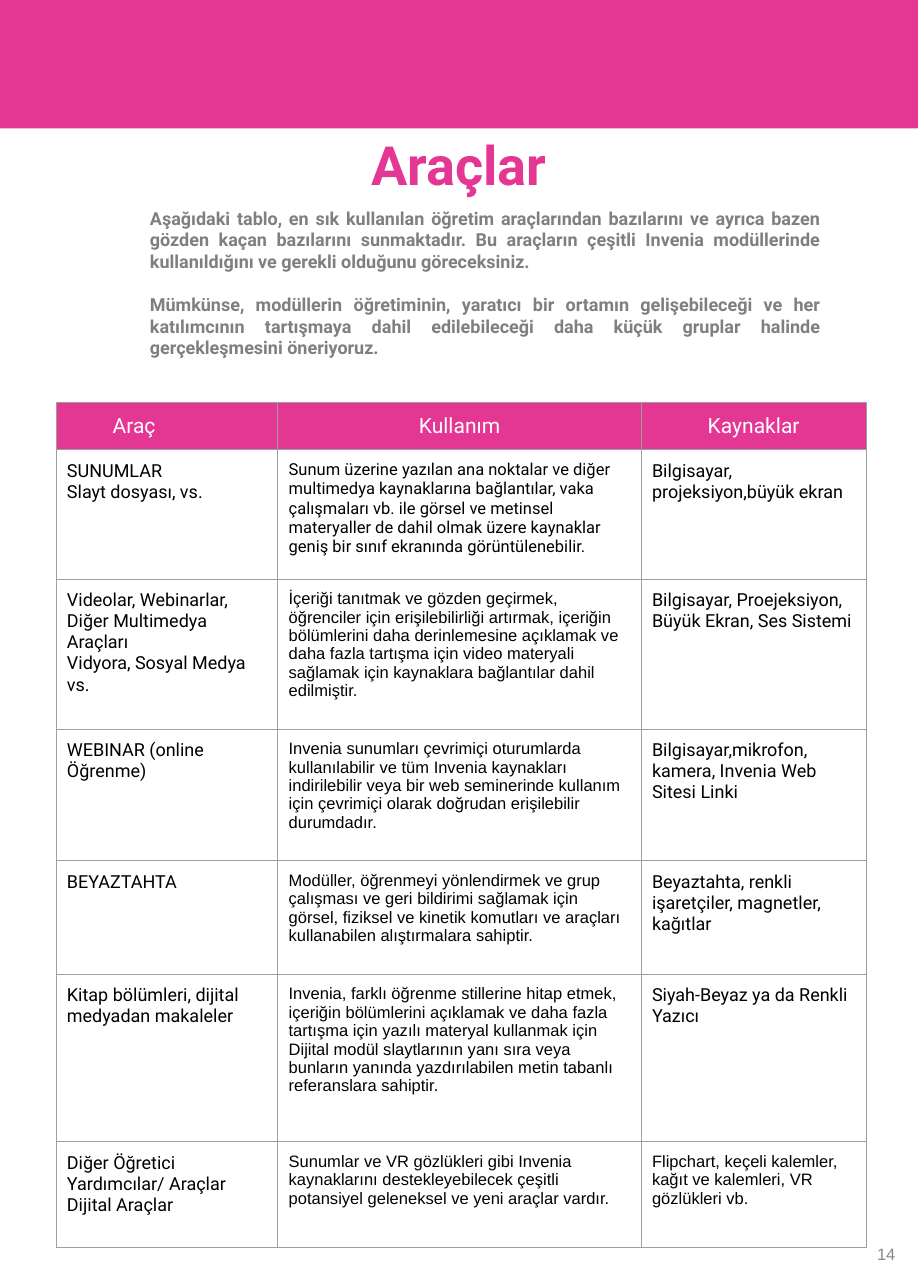
from lxml import etree
from pptx import Presentation
from pptx import util as u
from pptx.dml.color import RGBColor
from pptx.enum import shapes, text
from pptx.oxml.ns import qn

COLORS = {
    "pink": "E43794", "white": "FFFFFF", "black": "000000",
    "intro": "7F7F7F", "number": "888888", "border": "9E9E9E",
}
COLUMN_SHARES = [205, 336, 208]
ROW_SHARES = [43, 120, 139, 122, 105, 155, 98]
HEADERS = ["Araç", "Kullanım", "Kaynaklar"]
INTRO = [
    "Aşağıdaki tablo, en sık kullanılan öğretim araçlarından bazılarını ve ayrıca bazen gözden kaçan bazılarını sunmaktadır. Bu araçların çeşitli Invenia modüllerinde kullanıldığını ve gerekli olduğunu göreceksiniz.",
    "Mümkünse, modüllerin öğretiminin, yaratıcı bir ortamın gelişebileceği ve her katılımcının tartışmaya dahil edilebileceği daha küçük gruplar halinde gerçekleşmesini öneriyoruz.",
]
TOOLS = [
    ("SUNUMLAR\nSlayt dosyası, vs.",
     "Sunum üzerine yazılan ana noktalar ve diğer multimedya kaynaklarına bağlantılar, vaka çalışmaları vb. ile görsel ve metinsel materyaller de dahil olmak üzere kaynaklar geniş bir sınıf ekranında görüntülenebilir.",
     "Bilgisayar, projeksiyon,büyük ekran"),
    ("Videolar, Webinarlar, Diğer Multimedya Araçları\nVidyora, Sosyal Medya vs.",
     "İçeriği tanıtmak ve gözden geçirmek, öğrenciler için erişilebilirliği artırmak, içeriğin bölümlerini daha derinlemesine açıklamak ve daha fazla tartışma için video materyali sağlamak için kaynaklara bağlantılar dahil edilmiştir.",
     "Bilgisayar, Proejeksiyon, Büyük Ekran, Ses Sistemi"),
    ("WEBINAR (online Öğrenme)",
     "Invenia sunumları çevrimiçi oturumlarda kullanılabilir ve tüm Invenia kaynakları indirilebilir veya bir web seminerinde kullanım için çevrimiçi olarak doğrudan erişilebilir durumdadır.",
     "Bilgisayar,mikrofon, kamera, Invenia Web Sitesi Linki"),
    ("BEYAZTAHTA",
     "Modüller, öğrenmeyi yönlendirmek ve grup çalışması ve geri bildirimi sağlamak için görsel, fiziksel ve kinetik komutları ve araçları kullanabilen alıştırmalara sahiptir.",
     "Beyaztahta, renkli işaretçiler, magnetler, kağıtlar"),
    ("Kitap bölümleri, dijital medyadan makaleler",
     "Invenia, farklı öğrenme stillerine hitap etmek, içeriğin bölümlerini açıklamak ve daha fazla tartışma için yazılı materyal kullanmak için Dijital modül slaytlarının yanı sıra veya bunların yanında yazdırılabilen metin tabanlı referanslara sahiptir.",
     "Siyah-Beyaz ya da Renkli Yazıcı"),
    ("Diğer Öğretici Yardımcılar/ Araçlar Dijital Araçlar",
     "Sunumlar ve VR gözlükleri gibi Invenia kaynaklarını destekleyebilecek çeşitli potansiyel geleneksel ve yeni araçlar vardır.",
     "Flipchart, keçeli kalemler, kağıt ve kalemleri, VR gözlükleri vb."),
]


def rgb(name):
    return RGBColor.from_string(COLORS[name])


def box_of(prs, left, top, width, height):
    w, h = prs.slide_width / 100, prs.slide_height / 100
    return [round(v) for v in (left * w, top * h, width * w, height * h)]


def style(tf, size, color, font="Roboto", bold=False, align=text.PP_ALIGN.LEFT):
    for p in tf.paragraphs:
        p.alignment = align
        for r in p.runs:
            r.font.size = u.Pt(size)
            r.font.name = font
            r.font.bold = bold
            r.font.color.rgb = rgb(color)


def add_text(s, box, content, *args, **kwargs):
    tf = s.shapes.add_textbox(*box).text_frame
    tf.word_wrap = True
    tf.text = content
    style(tf, *args, **kwargs)
    return tf


def add_band(s, box):
    sp = s.shapes.add_shape(shapes.MSO_SHAPE.RECTANGLE, *box)
    sp.shadow.inherit = False
    sp.fill.solid()
    sp.fill.fore_color.rgb = rgb("pink")
    sp.line.fill.background()


def add_title(s, box):
    tf = add_text(s, box, "Araçlar", 36, "pink", bold=True, align=text.PP_ALIGN.CENTER)
    tf.paragraphs[0].line_spacing = 0.9


def add_intro(s, box):
    tf = add_text(s, box, "\n".join(INTRO), 12, "intro", bold=True,
                  align=text.PP_ALIGN.JUSTIFY)
    for p in tf.paragraphs:
        p._p.get_or_add_pPr().set("marL", str(u.Inches(0.5)))
    tf.paragraphs[1].space_before = u.Pt(14.4)


def add_number(s, box):
    tf = add_text(s, box, "14", 11, "number", font="Arial", align=text.PP_ALIGN.RIGHT)
    tf.vertical_anchor = text.MSO_ANCHOR.MIDDLE


def add_borders(cell):
    tcPr = cell._tc.get_or_add_tcPr()
    for side in ("lnL", "lnR", "lnT", "lnB"):
        ln = etree.SubElement(tcPr, qn("a:" + side), w=str(u.Pt(0.75)))
        fill = etree.SubElement(ln, qn("a:solidFill"))
        etree.SubElement(fill, qn("a:srgbClr"), val=COLORS["border"])


def fill_cell(cell, content, row, col):
    cell.margin_left = cell.margin_right = u.Inches(0.1)
    cell.margin_top = cell.margin_bottom = u.Inches(0.1)
    add_borders(cell)
    tf = cell.text_frame
    tf.text = content
    if row == 0:
        cell.fill.solid()
        cell.fill.fore_color.rgb = rgb("pink")
        style(tf, 14, "white", align=text.PP_ALIGN.CENTER)
        return
    cell.fill.background()
    small = col == 1 or (row == len(TOOLS) and col == 2)
    arial = small and row > 1
    style(tf, 11 if small else 12, "black", font="Arial" if arial else "Roboto")


def add_tools(s, box):
    rows = [HEADERS, *TOOLS]
    table = s.shapes.add_table(len(rows), len(HEADERS), *box).table
    for column, share in zip(table.columns, COLUMN_SHARES):
        column.width = round(box[2] * share / sum(COLUMN_SHARES))
    for table_row, share in zip(table.rows, ROW_SHARES):
        table_row.height = round(box[3] * share / sum(ROW_SHARES))
    for i, contents in enumerate(rows):
        for j, content in enumerate(contents):
            fill_cell(table.cell(i, j), content, i, j)
    table.cell(0, 0).margin_right = u.Inches(0.71)


def main():
    prs = Presentation()
    prs.slide_width, prs.slide_height = u.Inches(8.5), u.Inches(11.93)
    s = prs.slides.add_slide(prs.slide_layouts[6])
    add_band(s, box_of(prs, 0, 0, 100, 9.97))
    add_number(s, box_of(prs, 63.41, 95.64, 35.29, 3.35))
    add_title(s, box_of(prs, 12.94, 10.39, 74.12, 6.45))
    add_intro(s, box_of(prs, 9.29, 15.67, 81.29, 12.07))
    add_tools(s, box_of(prs, 6.12, 31.27, 88.24, 65.55))
    prs.save("out.pptx")


if __name__ == "__main__":
    main()
